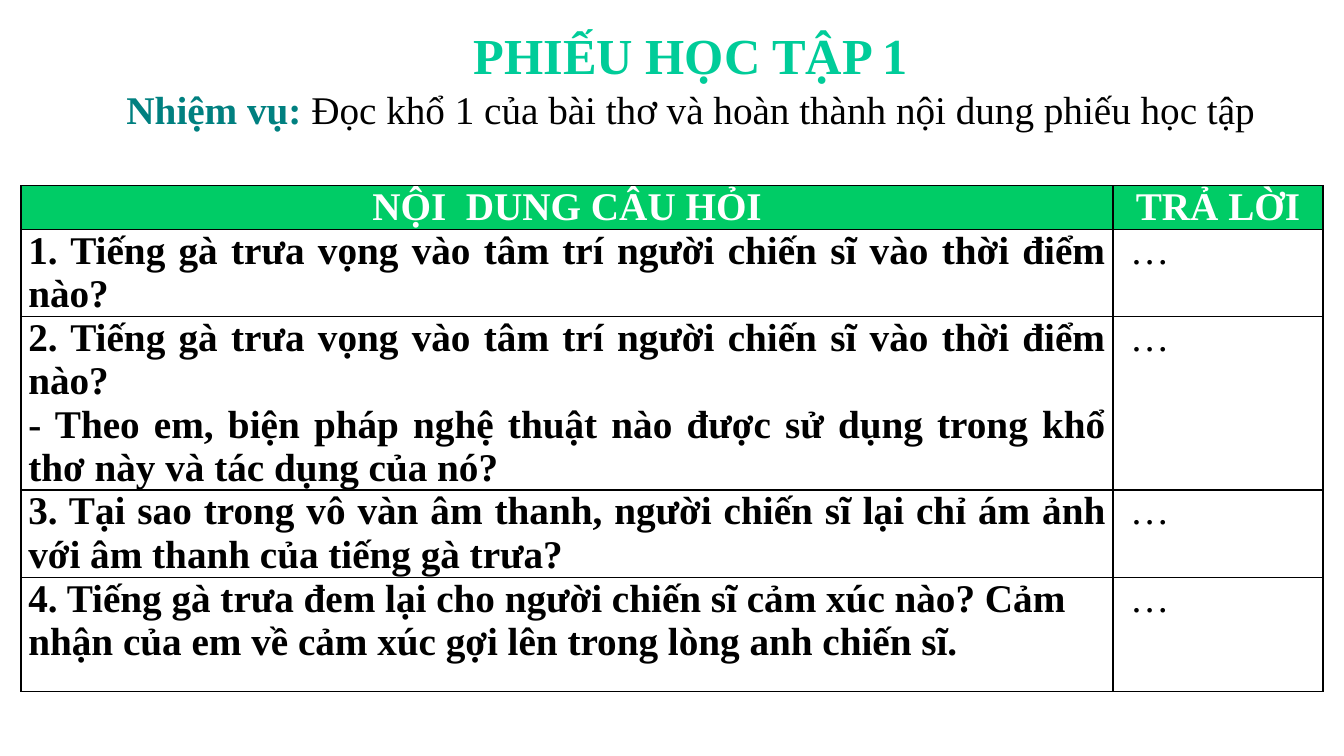
from dataclasses import dataclass

from lxml import etree
from pptx import Presentation
from pptx.dml.color import RGBColor
from pptx.enum import text
from pptx.oxml import ns
from pptx.util import Pt

PX = 9525  # EMU in one px, 96 px to the inch


@dataclass(frozen=True)
class Theme:
    font: str = "Times New Roman"
    title_size: int = 36
    body_size: int = 28
    border_pt: int = 1
    title: str = "00CC99"
    label: str = "008080"
    header: str = "00CC66"
    header_text: str = "FFFFFF"
    ink: str = "000000"


THEME = Theme()
CENTER, JUSTIFY, LEFT = (text.PP_ALIGN.CENTER, text.PP_ALIGN.JUSTIFY,
                         text.PP_ALIGN.LEFT)

COLUMNS = [1040, 200]
ROWS = [41, 83, 165, 83, 109]
HEADINGS = ["NỘI  DUNG CÂU HỎI", "TRẢ LỜI"]
ANSWER = " …"
QUESTIONS = [
    (JUSTIFY, ["1. Tiếng gà trưa vọng vào tâm trí người chiến sĩ vào thời điểm nào?"]),
    (JUSTIFY, ["2. Tiếng gà trưa vọng vào tâm trí người chiến sĩ vào thời điểm nào?",
               "- Theo em, biện pháp nghệ thuật nào được sử dụng trong khổ thơ này "
               "và tác dụng của nó? "]),
    (JUSTIFY, ["3. Tại sao trong vô vàn âm thanh, người chiến sĩ lại chỉ ám ảnh "
               "với âm thanh của tiếng gà trưa?"]),
    (LEFT, ["4. Tiếng gà trưa đem lại cho người chiến sĩ cảm xúc nào? Cảm nhận "
            "của em về cảm xúc gợi lên trong lòng anh chiến sĩ."]),
]


def px(*values):
    return [value * PX for value in values]


def set_attrs(obj, values):
    for name, value in values.items():
        setattr(obj, name, value)


def add_run(p, words, color, size=THEME.body_size, bold=True):
    r = p.add_run()
    r.text = words
    set_attrs(r.font, {"name": THEME.font, "size": Pt(size), "bold": bold})
    r.font.color.rgb = RGBColor.from_string(color)


def add_paragraph(tf, index, align, indent=0):
    p = tf.paragraphs[0] if index == 0 else tf.add_paragraph()
    p.alignment = align
    if indent:
        pPr = p._p.get_or_add_pPr()
        pPr.set("marL", "0")
        pPr.set("indent", str(indent * PX))
    return p


def add_heading(slide):
    sp = slide.shapes.add_textbox(*px(63, 18, 1154, 113))
    tf = sp.text_frame
    set_attrs(tf, {"word_wrap": False,
                   "auto_size": text.MSO_AUTO_SIZE.SHAPE_TO_FIT_TEXT,
                   "vertical_anchor": text.MSO_ANCHOR.MIDDLE})
    title = add_paragraph(tf, 0, CENTER, indent=48)
    add_run(title, "PHIẾU HỌC TẬP 1 ", THEME.title, THEME.title_size)
    task = add_paragraph(tf, 1, LEFT, indent=48)
    add_run(task, "Nhiệm vụ: ", THEME.label)
    add_run(task, "Đọc khổ 1 của bài thơ và hoàn thành nội dung phiếu học tập",
            THEME.ink, bold=False)


def add_borders(cell):
    tcPr = cell._tc.get_or_add_tcPr()
    for side in ("lnL", "lnR", "lnT", "lnB"):
        ln = etree.SubElement(tcPr, ns.qn(f"a:{side}"), w=str(Pt(THEME.border_pt)))
        fill = etree.SubElement(ln, ns.qn("a:solidFill"))
        etree.SubElement(fill, ns.qn("a:srgbClr"), val=THEME.ink)


def fill_cell(cell, lines, align, color=THEME.ink, bold=True, fill=None):
    margin, = px(7)
    set_attrs(cell, {"margin_left": margin, "margin_right": margin,
                     "margin_top": 0, "margin_bottom": 0})
    add_borders(cell)
    if fill:
        cell.fill.solid()
        cell.fill.fore_color.rgb = RGBColor.from_string(fill)
    else:
        cell.fill.background()
    for index, line in enumerate(lines):
        add_run(add_paragraph(cell.text_frame, index, align), line, color, bold=bold)


def add_worksheet(slide):
    frame = slide.shapes.add_table(len(ROWS), len(COLUMNS),
                                   *px(20, 177, sum(COLUMNS), sum(ROWS)))
    table = frame.table
    for column, width in zip(table.columns, px(*COLUMNS)):
        column.width = width
    for row, height in zip(table.rows, px(*ROWS)):
        row.height = height
    for col, heading in enumerate(HEADINGS):
        fill_cell(table.cell(0, col), [heading], CENTER, THEME.header_text,
                  fill=THEME.header)
    for row, (align, lines) in enumerate(QUESTIONS, start=1):
        fill_cell(table.cell(row, 0), lines, align)
        fill_cell(table.cell(row, 1), [ANSWER], LEFT, bold=False)


def main():
    prs = Presentation()
    prs.slide_width, prs.slide_height = px(1280, 720)
    slide = prs.slides.add_slide(prs.slide_layouts[6])
    add_worksheet(slide)
    add_heading(slide)
    prs.save("out.pptx")


if __name__ == "__main__":
    main()
